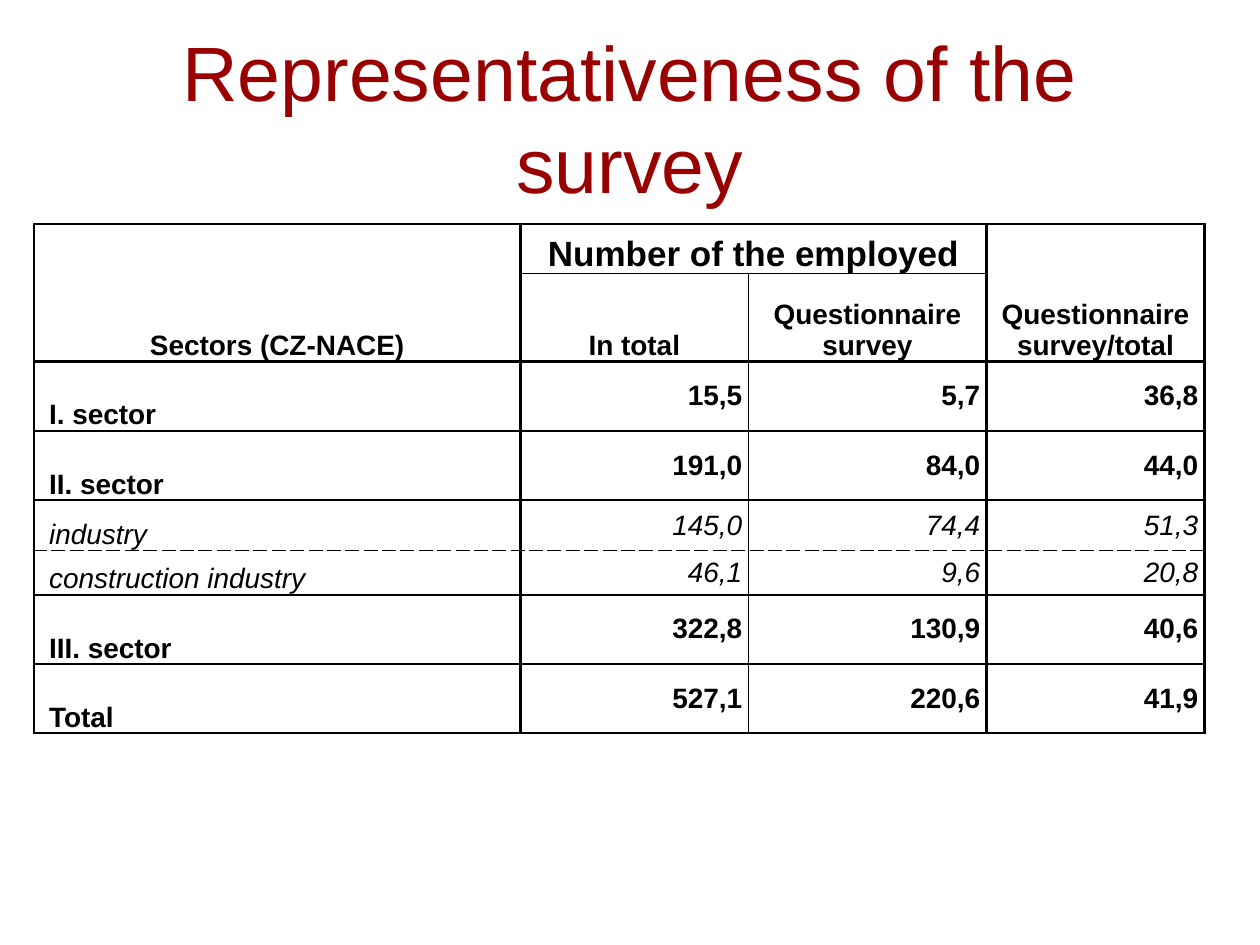
import pptx
import pptx.dml.color
import pptx.enum.text
import pptx.oxml
import pptx.oxml.ns
import pptx.util
from pptx.util import Inches

ALIGN = pptx.enum.text.PP_ALIGN
ANCHOR = pptx.enum.text.MSO_ANCHOR
NO_STYLE = "{2D5ABB26-0587-4C30-8999-92F81FD0307C}"
BLACK, WHITE, DARK_RED = "000000", "FFFFFF", "990000"

COLUMN_WIDTHS = [3.86, 1.81, 1.89, 1.73]
ROW_HEIGHTS = [0.39, 0.7, 0.55, 0.55, 0.4, 0.35, 0.55, 0.55]
COLUMN_LINES = [1.5, 1.5, 1, 1.5, 1.5]
ROW_LINES = [1.5, 1, 1.5, 1.5, 1, 1, 1.5, 1, 1.5]
DASHED_ROW_LINE = 5
ITALIC_ROWS = (4, 5)
HEADER_ROWS = 2
MERGES = [((0, 0), (1, 0)), ((0, 1), (0, 2)), ((0, 3), (1, 3))]
ROWS = [
    ["Sectors (CZ-NACE)", "Number of the employed", "", "Questionnaire survey/total"],
    ["", "In total", "Questionnaire survey", ""],
    ["I. sector", "15,5", "5,7", "36,8"],
    ["II. sector", "191,0", "84,0", "44,0"],
    ["industry", "145,0", "74,4", "51,3"],
    ["construction industry", "46,1", "9,6", "20,8"],
    ["III. sector", "322,8", "130,9", "40,6"],
    ["Total", "527,1", "220,6", "41,9"],
]


def rgb(color):
    """Return the colour object for a hex string."""
    return pptx.dml.color.RGBColor.from_string(color)


def write_text(text_frame, text, size, color, align, bold=False, italic=False):
    """Write one formatted run into the first paragraph."""
    paragraph = text_frame.paragraphs[0]
    paragraph.alignment = align
    run = paragraph.add_run()
    run.text = text
    run.font.name = "Arial"
    run.font.size = pptx.util.Pt(size)
    run.font.bold = bold
    run.font.italic = italic
    run.font.color.rgb = rgb(color)


def add_title(slide, text):
    """Place and fill the title placeholder."""
    title = slide.shapes.title
    title.left, title.top = Inches(0.5), Inches(0.3)
    title.width, title.height = Inches(9), Inches(1.25)
    title.text_frame.word_wrap = True
    title.text_frame.auto_size = pptx.enum.text.MSO_AUTO_SIZE.NONE
    title.text_frame.vertical_anchor = ANCHOR.MIDDLE
    write_text(title.text_frame, text, 44, DARK_RED, ALIGN.CENTER)


def add_border(cell, side, width, dash):
    """Draw one side of a cell."""
    namespace = pptx.oxml.ns.nsdecls("a")
    line = pptx.oxml.parse_xml(
        f'<a:ln{side} {namespace} w="{pptx.util.Pt(width)}"><a:solidFill>'
        f'<a:srgbClr val="{BLACK}"/></a:solidFill><a:prstDash val="{dash}"/></a:ln{side}>'
    )
    cell._tc.get_or_add_tcPr().append(line)


def draw_borders(cell, row, column):
    """Draw the four sides of a cell from the grid lines around it."""
    bottom = row + cell.span_height
    add_border(cell, "L", COLUMN_LINES[column], "solid")
    add_border(cell, "R", COLUMN_LINES[column + cell.span_width], "solid")
    for side, index in (("T", row), ("B", bottom)):
        dash = "sysDash" if index == DASHED_ROW_LINE else "solid"
        add_border(cell, side, ROW_LINES[index], dash)


def fill_cell(cell, row, column, text):
    """Set the margins, anchor, borders, fill and text of a cell."""
    header = row < HEADER_ROWS
    number = not header and column > 0
    italic = row in ITALIC_ROWS
    left = 0 if header else 0.05 if number else 0.12
    cell.margin_left = Inches(left)
    cell.margin_right = Inches(0.05 if number else 0)
    cell.margin_top = cell.margin_bottom = 0
    cell.vertical_anchor = ANCHOR.MIDDLE if number else ANCHOR.BOTTOM
    draw_borders(cell, row, column)
    cell.fill.solid()
    cell.fill.fore_color.rgb = rgb(WHITE)
    align = ALIGN.CENTER if header else ALIGN.RIGHT if number else ALIGN.LEFT
    size = 20 if cell.span_width > 1 else 16
    write_text(cell.text_frame, text, size, BLACK, align, not italic, italic)


def add_sector_table(slide):
    """Add the table of the employed by sector."""
    table = slide.shapes.add_table(
        len(ROWS), len(COLUMN_WIDTHS), Inches(0.27), Inches(1.78),
        Inches(sum(COLUMN_WIDTHS)), Inches(sum(ROW_HEIGHTS)),
    ).table
    table._tbl.tblPr.find(pptx.oxml.ns.qn("a:tableStyleId")).text = NO_STYLE
    table.first_row = table.horz_banding = False
    for column, width in zip(table.columns, COLUMN_WIDTHS):
        column.width = Inches(width)
    for row, height in zip(table.rows, ROW_HEIGHTS):
        row.height = Inches(height)
    for first, last in MERGES:
        table.cell(*first).merge(table.cell(*last))
    for row, texts in enumerate(ROWS):
        for column, text in enumerate(texts):
            cell = table.cell(row, column)
            if not cell.is_spanned:
                fill_cell(cell, row, column, text)


def main():
    """Build the slide and save it."""
    presentation = pptx.Presentation()
    presentation.slide_width = Inches(10)
    presentation.slide_height = Inches(7.5)
    slide = presentation.slides.add_slide(presentation.slide_layouts[5])
    add_title(slide, "Representativeness of the survey")
    add_sector_table(slide)
    presentation.save("out.pptx")


if __name__ == "__main__":
    main()
